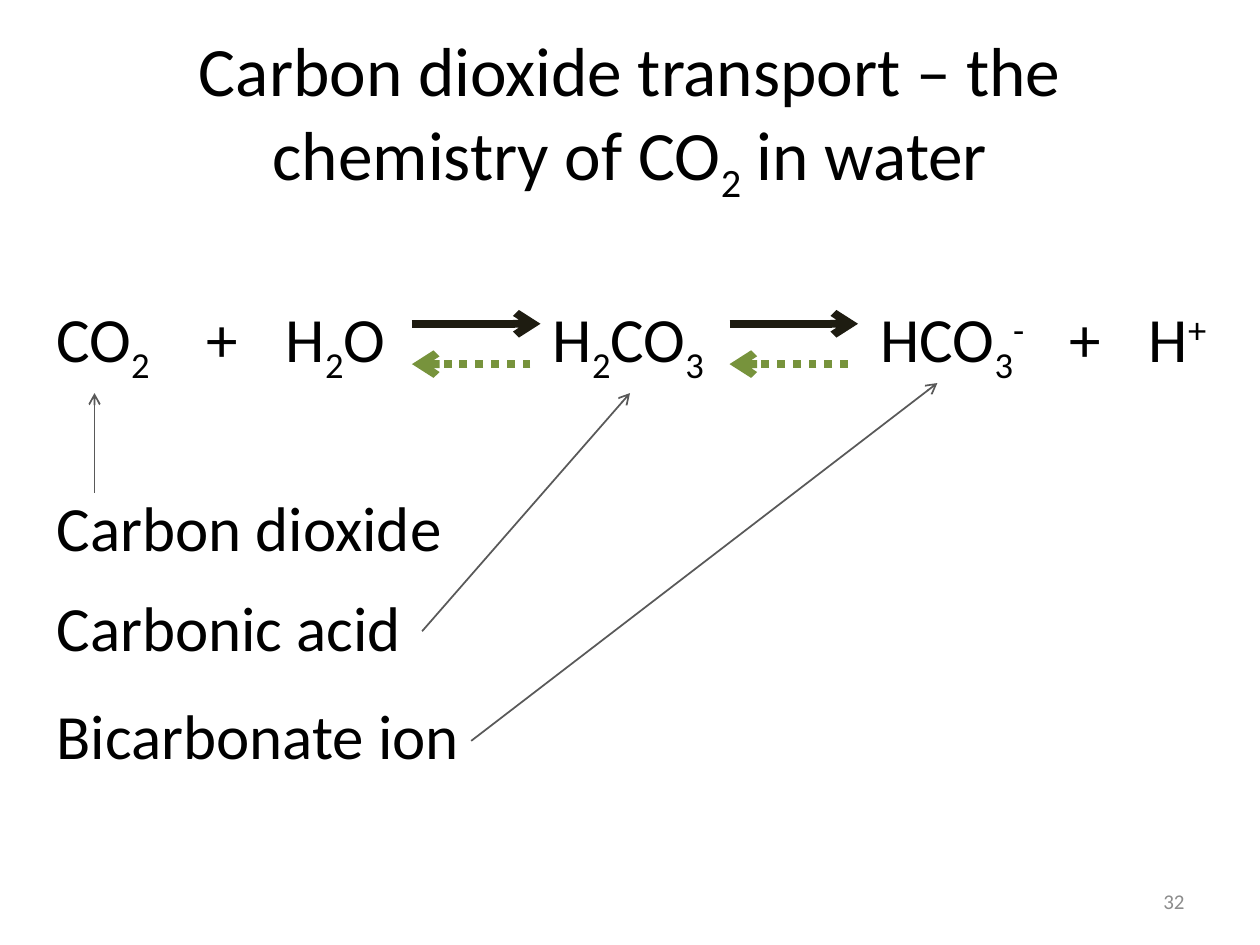
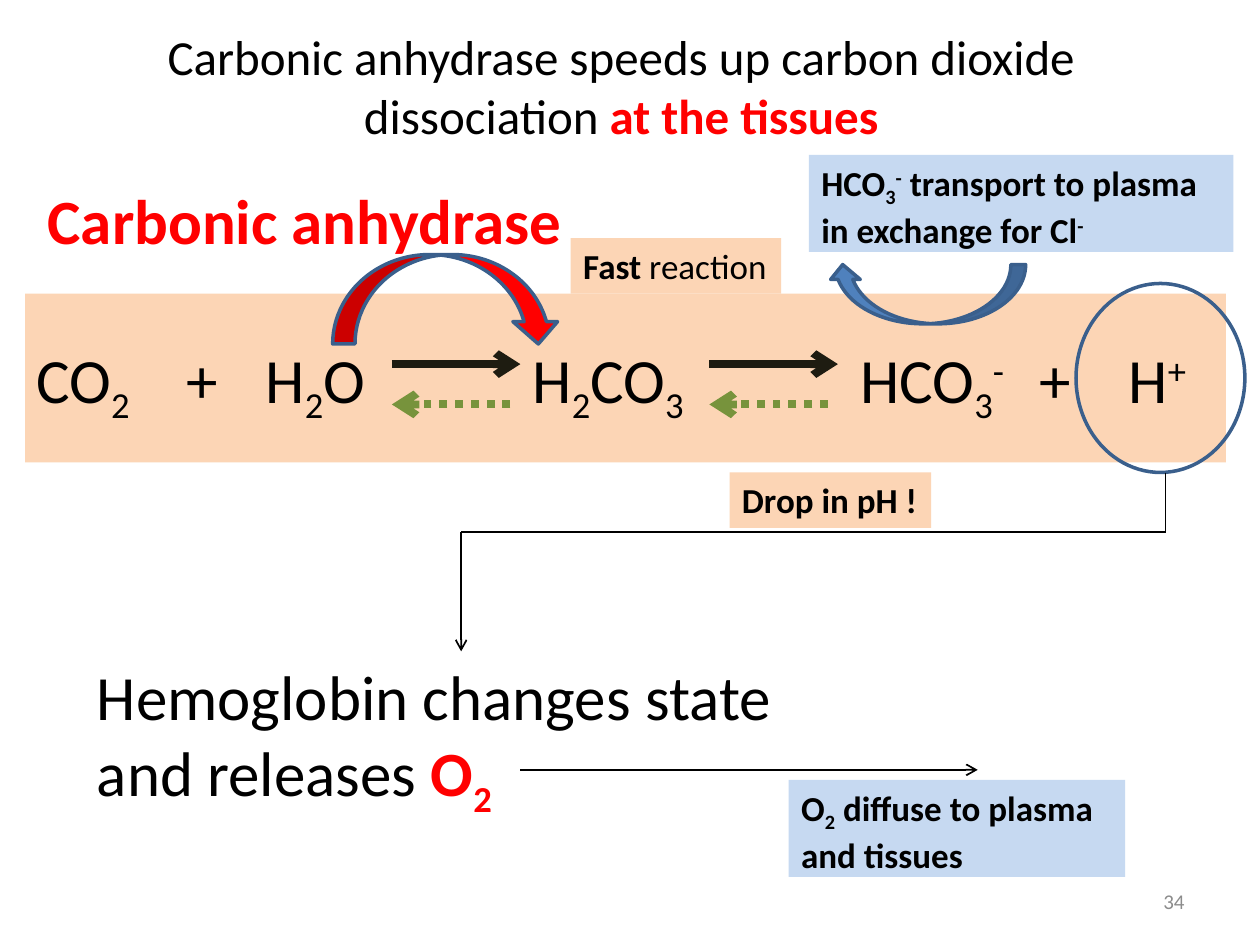
from pptx import Presentation
from pptx.dml.color import RGBColor
from pptx.enum.dml import MSO_LINE
from pptx.enum.shapes import MSO_CONNECTOR, MSO_SHAPE
from pptx.enum.text import MSO_ANCHOR, MSO_AUTO_SIZE, PP_ALIGN
from pptx.oxml.ns import qn
from pptx.util import Inches, Pt
from lxml import etree

COLORS = {
    "text": "000000", "red": "FF0000", "number": "8C8C8C", "pointer": "595959",
    "forward": "1E1C11", "reverse": "77933C", "outline": "3A5F8C",
    "peach": "FCD5B5", "pale_blue": "C6D9F1", "blue": "4F81BD", "white": "FFFFFF",
}
FONT = "Calibri"

# Content: a text is a list of paragraphs, a paragraph a list of runs.
# Leading marks on a run: _ subscript, ^ superscript, * bold, ! red
TITLE_WATER = [["Carbon dioxide transport – the chemistry of CO", "_2", " in water"]]
TITLE_TISSUES = [["Carbonic anhydrase speeds up carbon dioxide dissociation ",
                  "*!at the tissues"]]

# Equation terms: left, width, runs
TERMS = [
    (0.35, 0.97, ["CO", "_2"]),
    (1.54, 0.45, ["+"]),
    (2.17, 1.02, ["H", "_2", "O"]),
    (4.29, 1.46, ["H", "_2", "CO", "_3"]),
    (6.89, 1.44, ["HCO", "_3", "^-"]),
    (9.02, 0.68, ["H", "^+"]),
]
REACTION_LEFTS = [3.27, 5.79]

# Names of the molecules: top, width, text, pointer start and end
NAMES = [
    (3.83, 3.29, "Carbon dioxide", (0.75, 3.91), (0.75, 3.12)),
    (4.62, 2.96, "Carbonic acid", (3.35, 5.01), (5, 3.12)),
    (5.48, 3.43, "Bicarbonate ion", (3.74, 5.88), (7.44, 3.04)),
]

# Labels: box, size, fill, paragraphs
LABELS = [
    ((0.28, 1.39, 4.35, 0.71), 36, None, [["*!Carbonic anhydrase"]]),
    ((4.53, 1.89, 1.67, 0.44), 20, "peach", [["*Fast ", "reaction"]]),
    ((5.79, 3.75, 1.6, 0.44), 20, "peach", [["*Drop in pH !"]]),
    ((0.67, 5.17, 5.72, 1.31), 36, "white",
     [["Hemoglobin changes state"], ["and releases ", "*!O", "_*!2"]]),
    ((6.26, 6.19, 2.67, 0.77), 20, "pale_blue",
     [["*O", "_*2", "* diffuse to plasma"], ["*and tissues"]]),
    ((6.42, 1.23, 3.37, 0.77), 20, "pale_blue",
     [["*HCO", "_*3", "^*-", "* transport to plasma"],
      ["*in exchange for Cl", "^*-"]]),
]
PH_ROUTE = [(9.25, 3.75), (9.25, 4.22), (3.66, 4.22), (3.66, 5.17)]


def rgb(name):
    return RGBColor.from_string(COLORS[name])


def write(tf, paragraphs, size=36, color="text", align=None, anchor=None):
    """Fill a text frame from marked runs."""
    if anchor is not None:
        tf.vertical_anchor = anchor
    for i, runs in enumerate(paragraphs):
        p = tf.paragraphs[0] if i == 0 else tf.add_paragraph()
        p.alignment = align
        for run in runs:
            text = run.lstrip("_^*!")
            marks = run[:len(run) - len(text)]
            r = p.add_run()
            r.text = text
            r.font.name, r.font.size = FONT, Pt(size)
            r.font.bold = "*" in marks
            r.font.color.rgb = rgb("red" if "!" in marks else color)
            for mark, baseline in (("_", "-25000"), ("^", "30000")):
                if mark in marks:
                    r.font._element.set("baseline", baseline)


def add_text(s, box, paragraphs, fill=None, wrap=False, **fmt):
    sp = s.shapes.add_textbox(*map(Inches, box))
    tf = sp.text_frame
    tf.word_wrap = wrap
    tf.auto_size = MSO_AUTO_SIZE.NONE if wrap else MSO_AUTO_SIZE.SHAPE_TO_FIT_TEXT
    if fill:
        sp.fill.solid()
        sp.fill.fore_color.rgb = rgb(fill)
    write(tf, paragraphs, **fmt)


def add_shape(s, kind, box, fill=None, line=None, rotation=0):
    sp = s.shapes.add_shape(kind, *map(Inches, box))
    sp.shadow.inherit = False
    sp.rotation = rotation
    if fill:
        sp.fill.solid()
        sp.fill.fore_color.rgb = rgb(fill)
    else:
        sp.fill.background()
    if line:
        sp.line.color.rgb = rgb(line)
        sp.line.width = Pt(2)
    else:
        sp.line.fill.background()


def add_line(s, start, end, color="text", width=1, dash=None, arrow=True):
    c = s.shapes.add_connector(MSO_CONNECTOR.STRAIGHT, *map(Inches, start + end))
    c.line.color.rgb = rgb(color)
    c.line.width = Pt(width)
    if dash:
        c.line.dash_style = dash
    if arrow:
        etree.SubElement(c.line._get_or_add_ln(), qn("a:tailEnd"), type="arrow")
    etree.SubElement(c._element.spPr, qn("a:effectLst"))


def add_slide(prs, title, box, size, number):
    """Slide with the shared title style and page number."""
    s = prs.slides.add_slide(prs.slide_layouts[5])
    sp = s.shapes.title
    sp.left, sp.top, sp.width, sp.height = map(Inches, box)
    sp.text_frame.auto_size = MSO_AUTO_SIZE.NONE
    write(sp.text_frame, title, size=size, align=PP_ALIGN.CENTER,
          anchor=MSO_ANCHOR.MIDDLE)
    add_text(s, (7.17, 6.95, 2.33, 0.4), [[str(number)]], wrap=True, size=12,
             color="number", align=PP_ALIGN.RIGHT, anchor=MSO_ANCHOR.MIDDLE)
    return s


def add_equation(s, plus_left, dx=0, dy=0):
    """Both reaction steps, shifted by dx and dy."""
    for left, width, runs in TERMS:
        add_text(s, (left + dx, 2.33 + dy, width, 0.71), [runs])
    add_text(s, (plus_left, 2.33 + dy, 0.45, 0.71), [["+"]])
    for left in REACTION_LEFTS:
        x, y = left + dx, 2.57 + dy
        add_line(s, (x, y), (x + 1.02, y), "forward", 4.5)
        add_line(s, (x + 0.94, y + 0.32), (x, y + 0.32), "reverse", 4.5,
                 dash=MSO_LINE.ROUND_DOT)


def build_water(prs):
    s = add_slide(prs, TITLE_WATER, (0.5, 0.3, 9, 1.25), 39.6, 32)
    add_equation(s, plus_left=8.39)
    for top, width, name, start, end in NAMES:
        add_text(s, (0.35, top, width, 0.71), [[name]])
        add_line(s, start, end, "pointer")


def build_tissues(prs):
    s = add_slide(prs, TITLE_TISSUES, (0.43, 0.13, 9, 1.1), 28, 34)
    # Equation on its band, hydrogen ion circled
    add_shape(s, MSO_SHAPE.RECTANGLE, (0.2, 2.33, 9.53, 1.34), "peach")
    add_shape(s, MSO_SHAPE.OVAL, (8.54, 2.25, 1.34, 1.5), line="outline")
    add_equation(s, plus_left=8.15, dx=-0.16, dy=0.32)
    # Labels and curved arrows
    for box, size, fill, paragraphs in LABELS:
        add_text(s, box, paragraphs, fill=fill, size=size)
    curved = MSO_SHAPE.CURVED_DOWN_ARROW
    add_shape(s, curved, (2.64, 2.02, 1.81, 0.71), "red", "outline")
    add_shape(s, curved, (6.57, 2.1, 1.57, 0.47), "blue", "outline", rotation=180)
    # Path from the pH drop to hemoglobin, then oxygen release
    for start, end in zip(PH_ROUTE, PH_ROUTE[1:]):
        add_line(s, start, end, arrow=end == PH_ROUTE[-1])
    add_line(s, (4.13, 6.11), (7.76, 6.11))


def main():
    prs = Presentation()
    prs.slide_width, prs.slide_height = Inches(10), Inches(7.5)
    build_water(prs)
    build_tissues(prs)
    prs.save("out.pptx")


if __name__ == "__main__":
    main()
